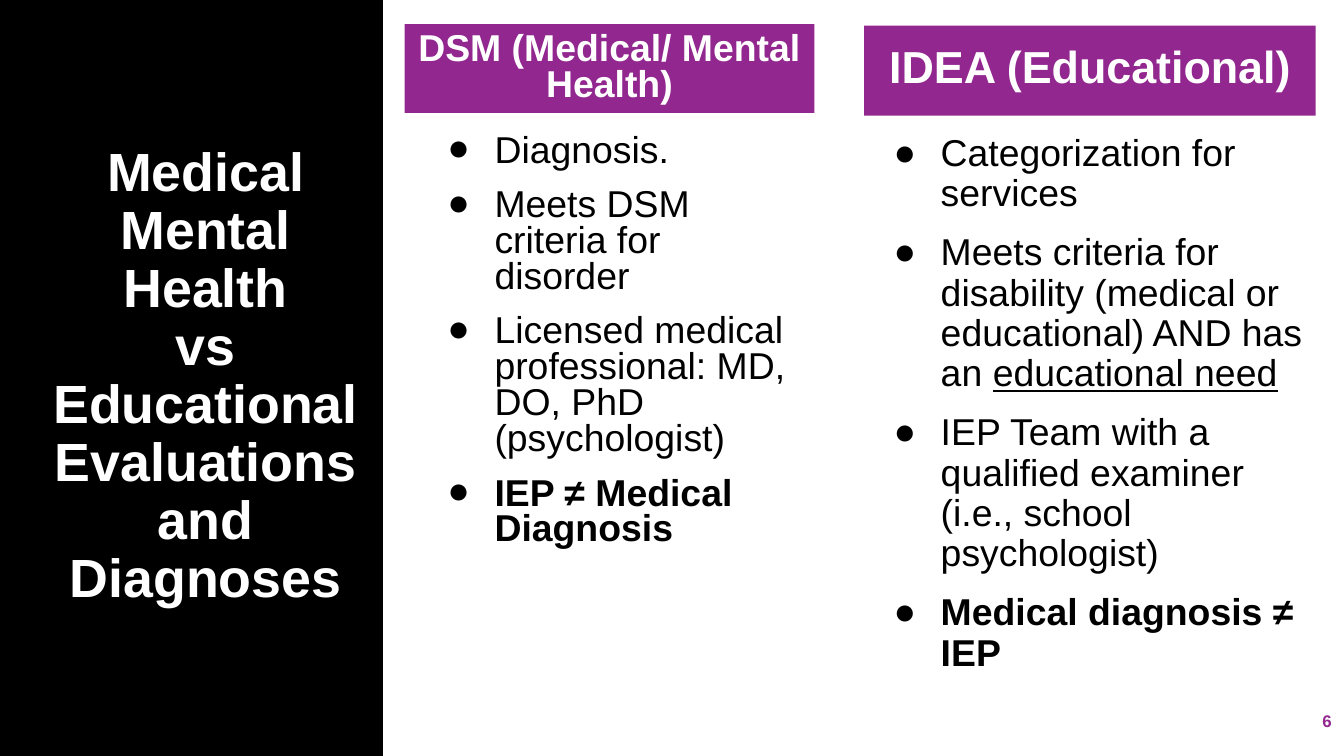
"""Build a slide comparing medical and educational evaluations."""
from lxml import etree
from pptx import Presentation
from pptx.dml.color import RGBColor
from pptx.enum import shapes, text
from pptx.oxml.ns import qn
from pptx.util import Inches, Pt

THEME = {
    "font": "Arial", "black": "000000", "white": "FFFFFF", "purple": "92278F",
    "title": 28.8, "heading": 24, "body": 20, "number": 9,
}
SLIDE_WIDTH = Inches(10)
SLIDE_HEIGHT = SLIDE_WIDTH * 9 // 16
TITLE = ["Medical Mental Health", "vs", "Educational Evaluations and Diagnoses"]
COLUMNS = [
    {
        "heading": "DSM (Medical/ Mental Health)", "heading_size": "body",
        "heading_box": (3.01, 0.18, 3.05, 0.66), "list_box": (3.11, 0.96, 2.96, 3.3),
        "line_spacing": 0.8,
        "items": [
            [("Diagnosis.", {})],
            [("Meets DSM criteria for disorder", {})],
            [("Licensed medical professional: MD, DO, PhD (psychologist)", {})],
            [("IEP ≠ Medical Diagnosis", {"bold": True})],
        ],
    },
    {
        "heading": "IDEA (Educational)", "heading_size": "heading",
        "heading_box": (6.43, 0.19, 3.36, 0.67), "list_box": (6.43, 0.96, 3.36, 4.07),
        "line_spacing": 0.9,
        "items": [
            [("Categorization for services", {})],
            [("Meets criteria for disability (medical or educational) AND has an ", {}),
             ("educational need", {"underline": True})],
            [("IEP Team with a qualified examiner (i.e., school psychologist)", {})],
            [("Medical diagnosis ≠ IEP", {"bold": True})],
        ],
    },
]
PAGE_NUMBER = "6"


def set_values(target, values):
    for name, value in values.items():
        setattr(target, name, value)


def place(shape, box):
    set_values(shape, dict(zip(("left", "top", "width", "height"), map(Inches, box))))


def add_block(slide, box, fill):
    shape = slide.shapes.add_shape(shapes.MSO_SHAPE.RECTANGLE, *map(Inches, box))
    shape.shadow.inherit = False
    shape.fill.solid()
    shape.fill.fore_color.rgb = RGBColor.from_string(THEME[fill])
    shape.line.fill.background()
    return shape


def add_bullet(paragraph):
    properties = paragraph._p.get_or_add_pPr()
    properties.set("marL", str(Inches(0.5)))
    properties.set("indent", str(Inches(-0.35)))
    color = etree.SubElement(properties, qn("a:buClr"))
    etree.SubElement(color, qn("a:srgbClr"), val=THEME["black"])
    etree.SubElement(properties, qn("a:buFont"), typeface=THEME["font"])
    etree.SubElement(properties, qn("a:buChar"), char="●")


def write(shape, paragraphs, size, color, align="CENTER", anchor="MIDDLE",
          line_spacing=0.9, bold=True, bullets=False):
    frame = shape.text_frame
    set_values(frame, {
        "word_wrap": True, "auto_size": text.MSO_AUTO_SIZE.NONE,
        "vertical_anchor": text.MSO_ANCHOR[anchor],
        "margin_left": Inches(0.07), "margin_right": Inches(0.07),
        "margin_top": Inches(0.04), "margin_bottom": Inches(0.04),
    })
    for index, runs in enumerate(paragraphs):
        paragraph = frame.add_paragraph() if index else frame.paragraphs[0]
        if bullets:
            add_bullet(paragraph)
        set_values(paragraph, {
            "alignment": text.PP_ALIGN[align], "line_spacing": line_spacing,
            "space_before": Pt(10 if bullets and index else 0),
        })
        for words, changes in runs:
            run = paragraph.add_run()
            run.text = words
            set_values(run.font, {"name": THEME["font"], "size": Pt(THEME[size]),
                                  "bold": bold, **changes})
            run.font.color.rgb = RGBColor.from_string(THEME[color])


def add_text(slide, box, *content, **options):
    write(slide.shapes.add_textbox(*map(Inches, box)), *content, **options)


def main():
    presentation = Presentation()
    set_values(presentation, {"slide_width": SLIDE_WIDTH, "slide_height": SLIDE_HEIGHT})
    slide = presentation.slides.add_slide(presentation.slide_layouts[5])
    panel = add_block(slide, (0, -0.01, 2.85, 5.7), "black")
    title = slide.shapes.title
    panel._element.addnext(title._element)
    place(title, (0.21, 0.92, 2.64, 3.77))
    write(title, [[(line, {})] for line in TITLE], "title", "white")

    for column in COLUMNS:
        heading = add_block(slide, column["heading_box"], "purple")
        write(heading, [[(column["heading"], {})]], column["heading_size"], "white",
              line_spacing=0.8)
        add_text(slide, column["list_box"], column["items"], "body", "black",
                 align="LEFT", anchor="TOP", line_spacing=column["line_spacing"],
                 bold=False, bullets=True)

    add_text(slide, (8.72, 5.21, 1.26, 0.3), [[(PAGE_NUMBER, {})]], "number", "purple",
             align="RIGHT", line_spacing=1.0)
    presentation.save("out.pptx")


if __name__ == "__main__":
    main()
